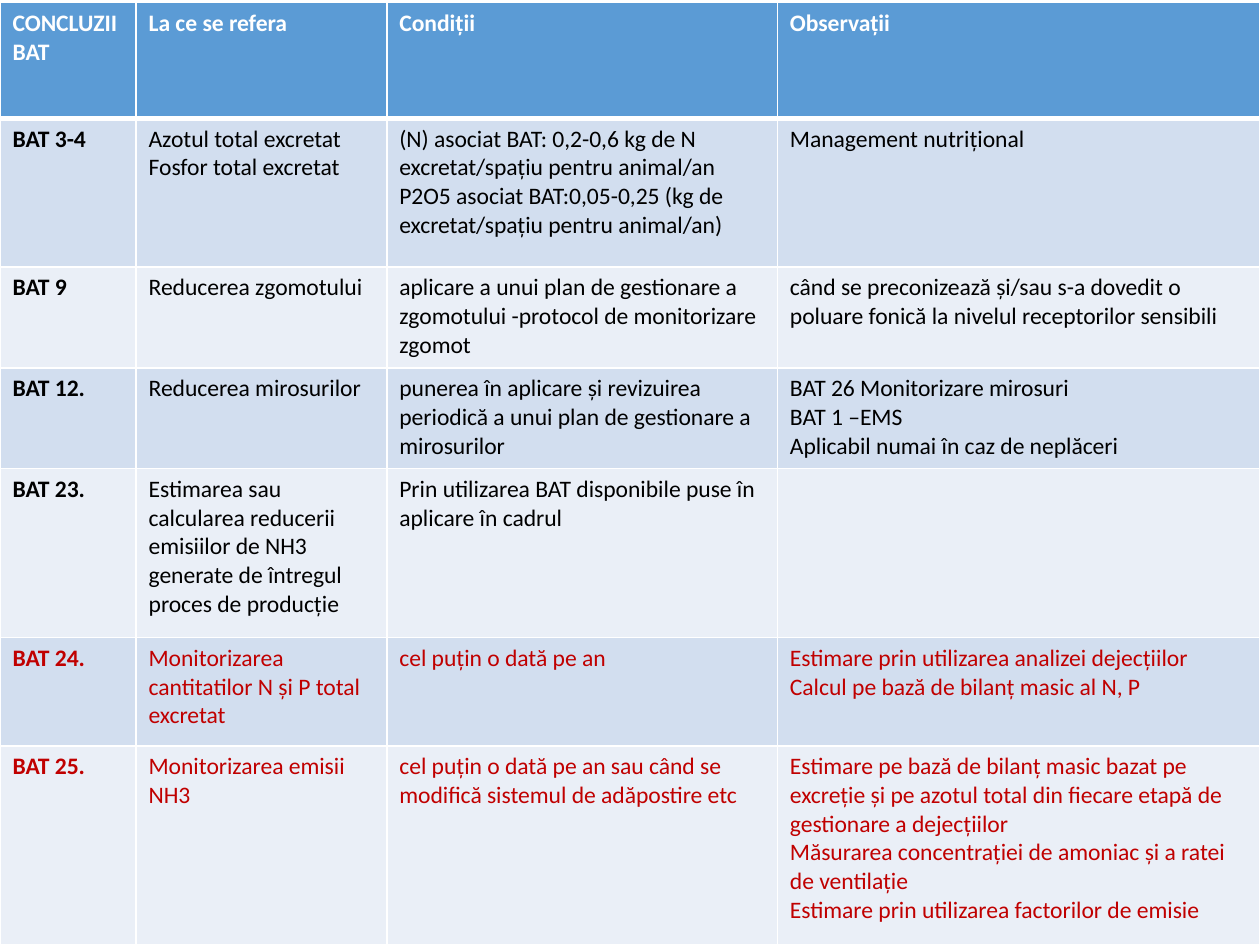
"""Build a slide with a table of BAT conclusions, conditions and remarks."""
import pptx
import pptx.dml.color
import pptx.oxml
import pptx.oxml.ns
import pptx.util

WIDE, HIGH = 10, 7.5
TOP = 0.02
COLS = [1.08, 1.99, 3.1, 3.83]
ROWS = [0.92, 1.18, 0.8, 0.8, 1.34, 0.86, 1.58]
WHITE, BLACK, RED = "FFFFFF", "000000", "C00000"
HEAD, BANDS = "5B9BD5", ["EAEFF7", "D2DEEF"]
INKS = [WHITE] + [BLACK] * 4 + [RED] * 2
DATA = [
    ["CONCLUZII BAT", "La ce se refera", "Condiții", "Observații"],
    ["BAT 3-4", "Azotul total excretat Fosfor total excretat",
     "(N) asociat BAT: 0,2-0,6 kg de N excretat/spațiu pentru animal/an\n"
     "P2O5 asociat BAT:0,05-0,25 (kg de excretat/spațiu pentru animal/an)",
     "Management nutrițional"],
    ["BAT 9", "Reducerea zgomotului",
     "aplicare a unui plan de gestionare a zgomotului -protocol de monitorizare zgomot",
     "când se preconizează și/sau s-a dovedit o poluare fonică la nivelul receptorilor sensibili"],
    ["BAT 12.", "Reducerea mirosurilor",
     "punerea în aplicare și revizuirea periodică a unui plan de gestionare a mirosurilor",
     "BAT 26 Monitorizare mirosuri\nBAT 1 –EMS\nAplicabil numai în caz de neplăceri"],
    ["BAT 23.",
     "Estimarea sau calcularea reducerii emisiilor de NH3 generate de întregul proces de producție",
     "Prin utilizarea BAT disponibile puse în aplicare în cadrul", ""],
    ["BAT 24.", "Monitorizarea cantitatilor N și P total excretat",
     "cel puțin o dată pe an",
     "Estimare prin utilizarea analizei dejecțiilor\nCalcul pe bază de bilanț masic al N, P"],
    ["BAT 25.", "Monitorizarea emisii NH3",
     "cel puțin o dată pe an sau când se modifică sistemul de adăpostire etc",
     "Estimare pe bază de bilanț masic bazat pe excreție și pe azotul total din fiecare etapă "
     "de gestionare a dejecțiilor\n"
     "Măsurarea concentrației de amoniac și a ratei de ventilație\n"
     "Estimare prin utilizarea factorilor de emisie"],
]


def paint(fill, tint):
    fill.solid()
    fill.fore_color.rgb = pptx.dml.color.RGBColor.from_string(tint)


def edge(cell, side, size):
    space = pptx.oxml.ns.nsdecls("a")
    line = pptx.oxml.parse_xml(
        f'<a:ln{side} {space} w="{pptx.util.Pt(size)}"><a:solidFill>'
        f'<a:srgbClr val="{WHITE}"/></a:solidFill></a:ln{side}>')
    cell._tc.get_or_add_tcPr().append(line)


deck = pptx.Presentation()
deck.slide_width = pptx.util.Inches(WIDE)
deck.slide_height = pptx.util.Inches(HIGH)
slide = deck.slides.add_slide(deck.slide_layouts[6])
frame = slide.shapes.add_table(
    len(ROWS), len(COLS), 0, pptx.util.Inches(TOP),
    deck.slide_width, pptx.util.Inches(HIGH - TOP))
table = frame.table
for col, width in zip(table.columns, COLS):
    col.width = pptx.util.Inches(width)
for row, height in zip(table.rows, ROWS):
    row.height = pptx.util.Inches(height)

for r, texts in enumerate(DATA):
    for c, text in enumerate(texts):
        cell = table.cell(r, c)
        edge(cell, "L", 1)
        edge(cell, "R", 1)
        edge(cell, "T", 3 if r == 1 else 1)
        edge(cell, "B", 3 if r == 0 else 1)
        paint(cell.fill, BANDS[r % 2] if r else HEAD)
        body = cell.text_frame
        for n, part in enumerate(text.split("\n") if text else []):
            para = body.add_paragraph() if n else body.paragraphs[0]
            run = para.add_run()
            run.text = part
            run.font.name = "Calibri"
            run.font.size = pptx.util.Pt(13.5)
            run.font.bold = r == 0 or c == 0
            paint(run.font.fill, INKS[r])

deck.save("out.pptx")
